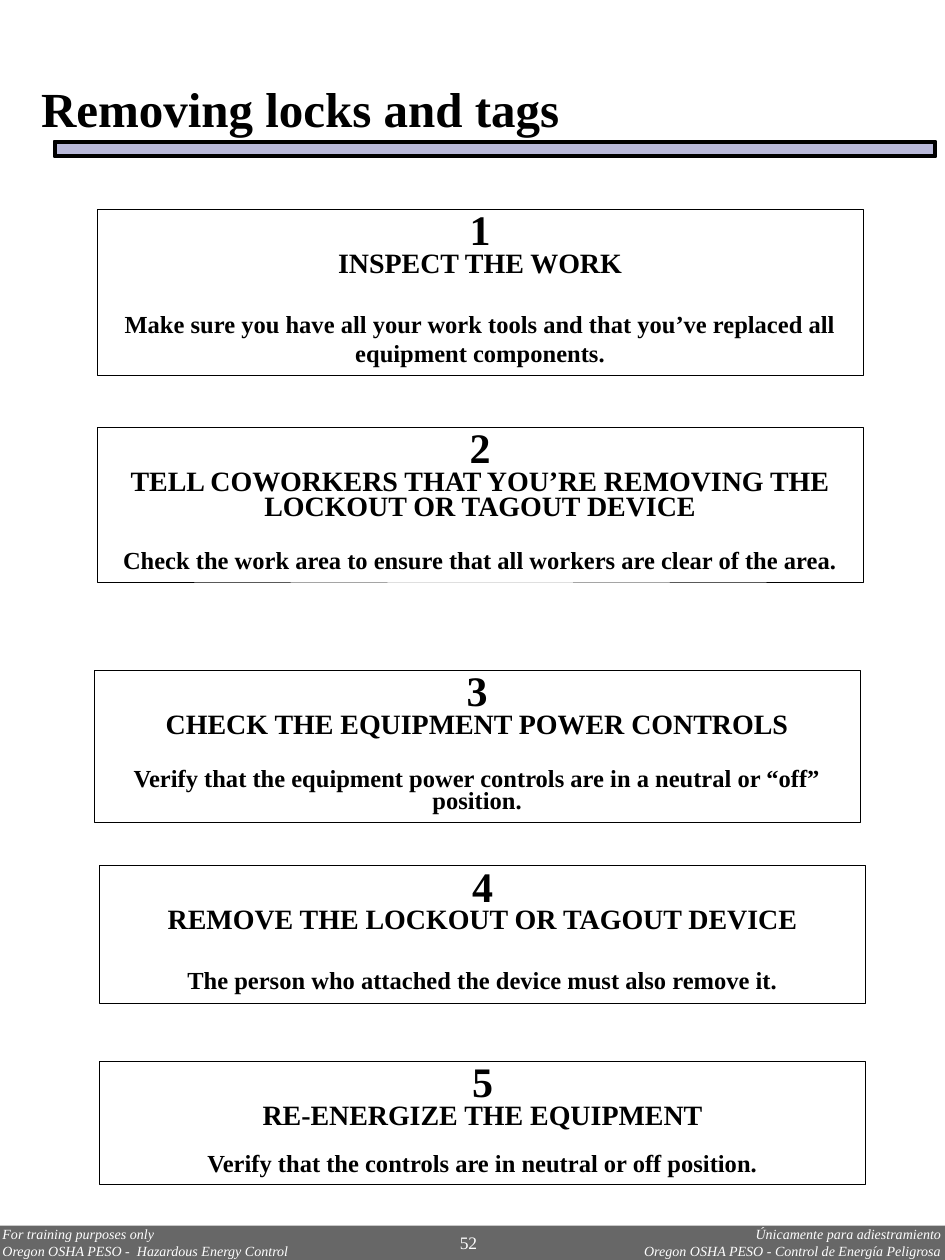
import pptx
import pptx.util
import pptx.dml.color
import pptx.enum.shapes
import pptx.enum.text

Cm, Pt = pptx.util.Cm, pptx.util.Pt
ALIGN = pptx.enum.text.PP_ALIGN
SHAPE = pptx.enum.shapes.MSO_SHAPE

FONT = "Times New Roman"
BLACK, WHITE, GREY, LAVENDER = "000000", "FFFFFF", "676767", "B9B9D9"
SLIDE_WIDTH, SLIDE_HEIGHT = 19.05, 25.4
BOX_WIDTH = 15.44
FOOTER_HEIGHT = 0.69
FOOTER_TOP = SLIDE_HEIGHT - FOOTER_HEIGHT

# Content
TITLE = "Removing locks and tags"
PAGE_NUMBER = "52"

# Heading, instruction, left, top, height, gap above instruction (pt), its line spacing
STEPS = [
    ("INSPECT THE WORK",
     "Make sure you have all your work tools and that you’ve replaced all equipment components.",
     1.96, 4.22, 3.35, 17.25, 1.0),
    ("TELL COWORKERS THAT YOU’RE REMOVING THE LOCKOUT OR TAGOUT DEVICE",
     "Check the work area to ensure that all workers are clear of the area.",
     1.96, 8.61, 3.12, 17.25, 0.75),
    ("CHECK THE EQUIPMENT POWER CONTROLS",
     "Verify that the equipment power controls are in a neutral or “off” position.",
     1.9, 13.51, 3.07, 17.25, 0.75),
    ("REMOVE THE LOCKOUT OR TAGOUT DEVICE",
     "The person who attached the device must also remove it.",
     2.01, 17.45, 2.77, 17.25, 1.0),
    ("RE-ENERGIZE THE EQUIPMENT",
     "Verify that the controls are in neutral or off position.",
     2.01, 21.39, 2.49, 13.8, 0.75),
]

# Lines, left, width, alignment
FOOTERS = [
    (["Únicamente para adiestramiento",
      "Oregon OSHA PESO - Control de Energía Peligrosa"], 10.34, 8.64, ALIGN.RIGHT),
    (["For training purposes only",
      "Oregon OSHA PESO -  Hazardous Energy Control"], 0.05, 8.48, ALIGN.LEFT),
]


def color(value):
    return pptx.dml.color.RGBColor.from_string(value)


def add_box(kind, left, top, width, height, fill=None, line_width=None):
    shape = slide.shapes.add_shape(kind, Cm(left), Cm(top), Cm(width), Cm(height))
    shape.shadow.inherit = False
    if fill:
        shape.fill.solid()
        shape.fill.fore_color.rgb = color(fill)
    else:
        shape.fill.background()
    if line_width:
        shape.line.color.rgb = color(BLACK)
        shape.line.width = Pt(line_width)
    else:
        shape.line.fill.background()
    return shape


def write(shape, lines, sizes, text_color=BLACK, alignment=ALIGN.LEFT,
          bold=False, italic=False):
    frame = shape.text_frame
    frame.word_wrap = True
    frame.vertical_anchor = pptx.enum.text.MSO_ANCHOR.TOP
    frame.text = "\n".join(lines)
    for paragraph, size in zip(frame.paragraphs, sizes):
        paragraph.alignment = alignment
        for run in paragraph.runs:
            font = run.font
            font.name, font.size = FONT, Pt(size)
            font.bold, font.italic = bold, italic
            font.color.rgb = color(text_color)
    return frame


def add_text(left, top, width, height, lines, size, **style):
    box = slide.shapes.add_textbox(Cm(left), Cm(top), Cm(width), Cm(height))
    return write(box, lines, [size] * len(lines), **style)


presentation = pptx.Presentation()
presentation.slide_width = Cm(SLIDE_WIDTH)
presentation.slide_height = Cm(SLIDE_HEIGHT)
slide = presentation.slides.add_slide(presentation.slide_layouts[6])

# Footer band
add_box(SHAPE.RECTANGLE, 0, FOOTER_TOP, SLIDE_WIDTH, FOOTER_HEIGHT, fill=GREY)
for lines, left, width, alignment in FOOTERS:
    frame = add_text(left, FOOTER_TOP, width, FOOTER_HEIGHT, lines, 8,
                     text_color=WHITE, alignment=alignment, italic=True)
    frame.margin_left = frame.margin_right = frame.margin_top = frame.margin_bottom = 0
add_text(9.02, FOOTER_TOP, 1.4, FOOTER_HEIGHT, [PAGE_NUMBER], 10, text_color=WHITE)

# Numbered steps
for number, (heading, instruction, left, top, height, gap, spacing) in enumerate(STEPS, 1):
    box = add_box(SHAPE.RECTANGLE, left, top, BOX_WIDTH, height, line_width=0.25)
    frame = write(box, [str(number), heading, instruction], [24, 16, 14],
                  alignment=ALIGN.CENTER, bold=True)
    for paragraph, line_spacing in zip(frame.paragraphs, (0.75, 0.75, spacing)):
        paragraph.line_spacing = line_spacing
    frame.paragraphs[-1].space_before = Pt(gap)

# Title and the bar under it
add_text(0.58, 1.45, 18.03, 1.45, [TITLE], 28, bold=True)
bar = add_box(SHAPE.BEVEL, 1.09, 2.84, 17.78, 0.33, fill=LAVENDER, line_width=1)
bar.adjustments[0] = 0.125

presentation.save("out.pptx")
